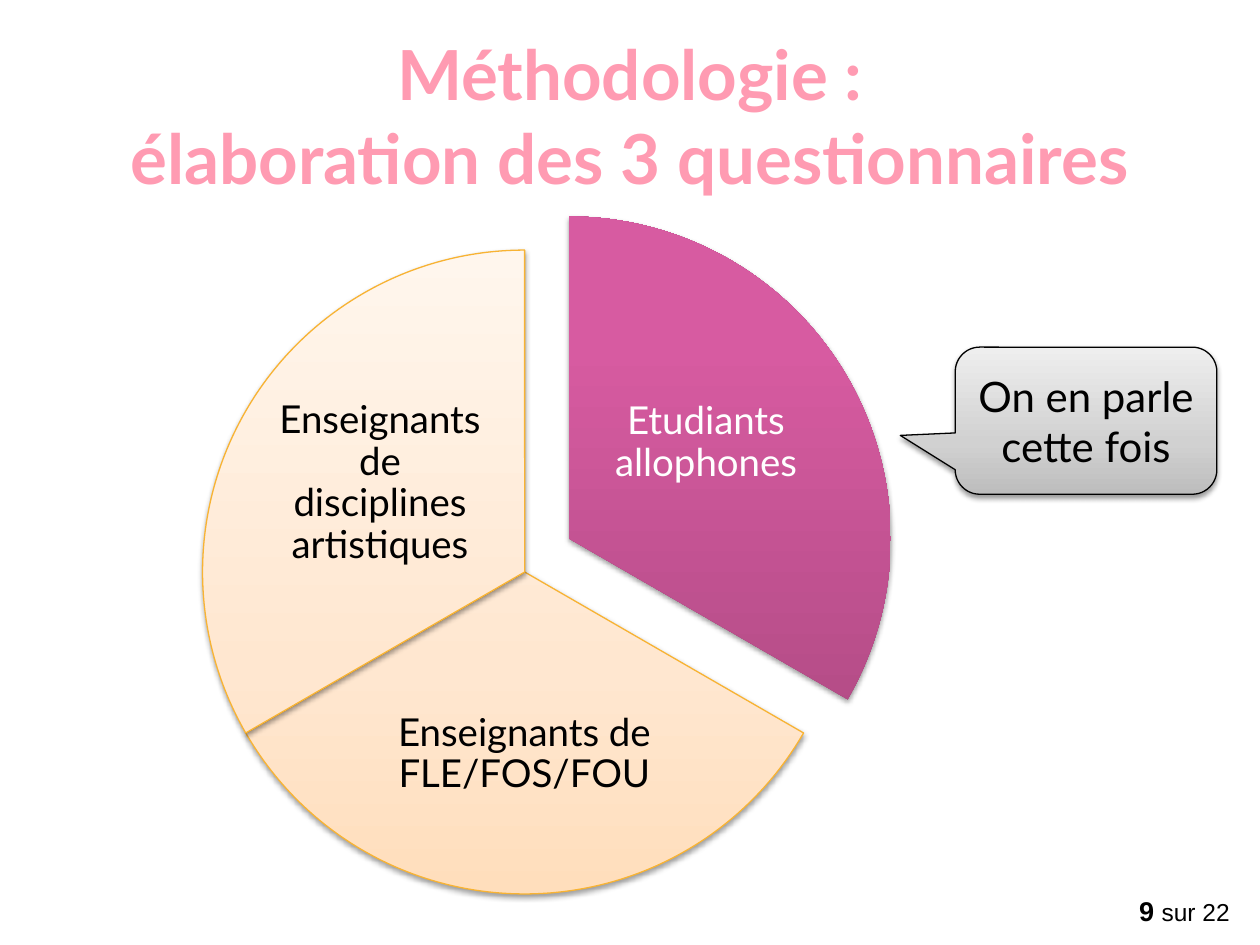
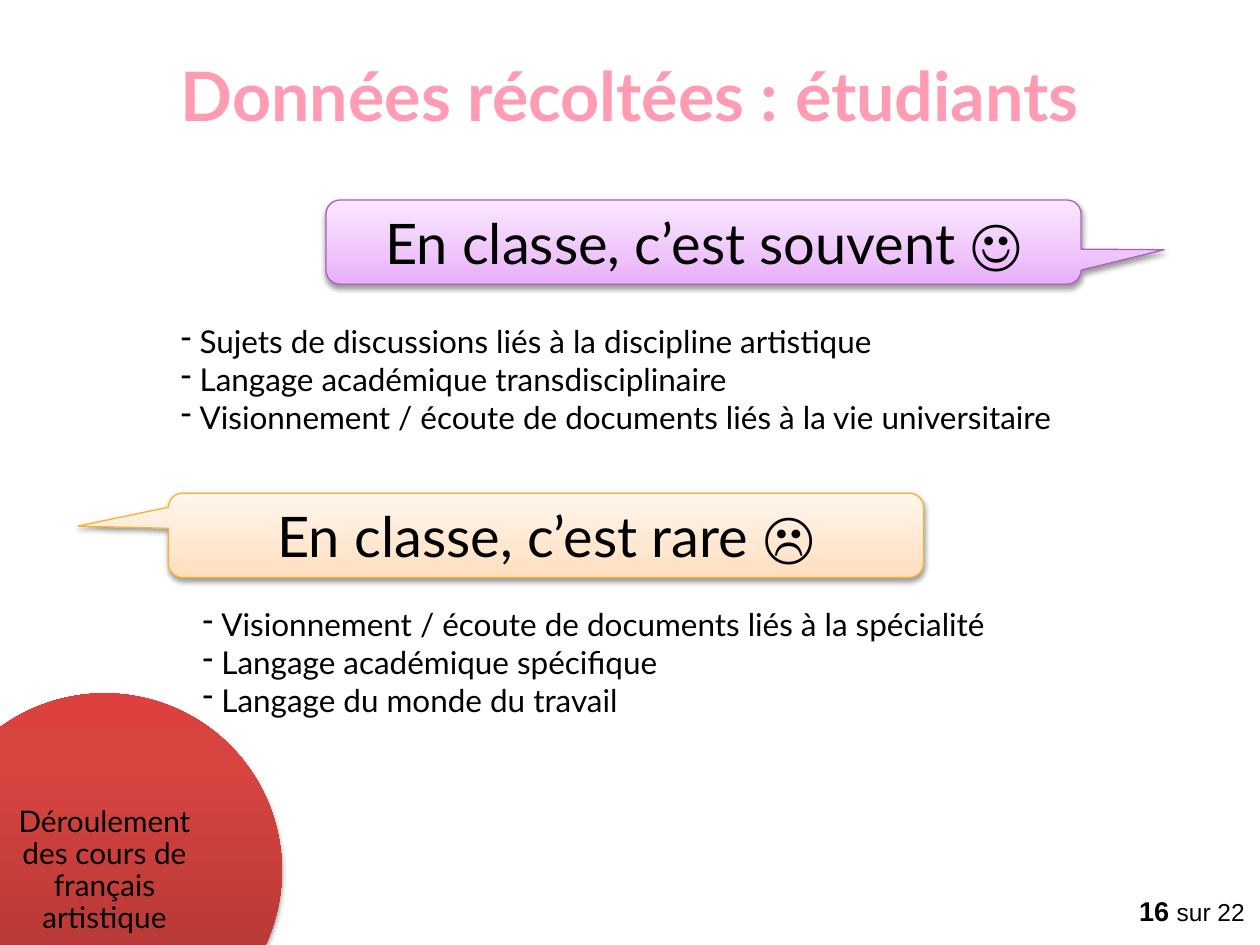
from dataclasses import dataclass
from typing import NamedTuple

import lxml.etree
import pptx
import pptx.dml.color
import pptx.enum.shapes
import pptx.enum.text
import pptx.oxml.ns
import pptx.util

Cm = pptx.util.Cm
Pt = pptx.util.Pt
SHAPE = pptx.enum.shapes.MSO_SHAPE
ALIGN = pptx.enum.text.PP_ALIGN
ANCHOR = pptx.enum.text.MSO_ANCHOR
qn = pptx.oxml.ns.qn


class Box(NamedTuple):
    """A rectangle in centimetres."""
    left: float
    top: float
    width: float
    height: float

    def region(self, left, top, width, height):
        return Box(self.left + left, self.top + top, width, height)

    def shifted(self, right, down):
        return self.region(right, down, self.width, self.height)

    def inner(self, margin):
        return self.region(margin, margin, self.width - 2 * margin, self.height - 2 * margin)

    def lengths(self):
        return [Cm(length) for length in self]


class Paint(NamedTuple):
    """Gradient stops from bottom to top, and an optional outline."""
    stops: tuple
    outline: str = ""


@dataclass(frozen=True)
class Theme:
    width: float = 25.43
    height: float = 19.08
    font: str = "Lato"
    footer_font: str = "Arial"
    title_color: str = "FF9BB2"
    ink: str = "000000"
    light_ink: str = "FFFFFF"
    heading_size: float = 32
    remark_size: float = 24
    wedge_size: float = 22
    list_size: float = 18
    topic_size: float = 17
    number_size: float = 15.5
    total_size: float = 14
    outline_width: float = 0.75
    pink: Paint = Paint(((0, "A5467C"), (80, "D75BA1"), (100, "DA59A2")))
    red: Paint = Paint(((0, "A73431"), (80, "D84440"), (100, "DC413D")))
    cream: Paint = Paint(((0, "FFDEBC"), (35, "FFE7D0"), (100, "FFF6ED")), "F8B333")
    violet: Paint = Paint(((0, "E9ACFA"), (35, "EFC5FB"), (100, "F9E8FE")), "AA62B9")
    grey: Paint = Paint(((0, "BDBDBD"), (35, "D1D1D1"), (100, "EEEEEE")), "000000")


THEME = Theme()
TOTAL_PAGES = 22


def rgb(code):
    return pptx.dml.color.RGBColor.from_string(code)


def add_color(parent, code):
    return lxml.etree.SubElement(parent, qn("a:srgbClr"), val=code)


def apply_gradient(shape, stops):
    shape.fill.gradient()
    shape.fill.gradient_angle = 90
    stop_list = shape._element.spPr.find(".//" + qn("a:gsLst"))
    for default_stop in list(stop_list):
        stop_list.remove(default_stop)
    for percent, code in stops:
        stop = lxml.etree.SubElement(stop_list, qn("a:gs"), pos=str(percent * 1000))
        add_color(stop, code)


def apply_shadow(shape):
    shape.shadow.inherit = False
    effects = shape._element.spPr.find(qn("a:effectLst"))
    shadow = lxml.etree.SubElement(
        effects, qn("a:outerShdw"), blurRad=str(Pt(3.1)), dist=str(Pt(1.6)),
        dir="5400000", rotWithShape="0")
    lxml.etree.SubElement(add_color(shadow, THEME.ink), qn("a:alpha"), val="38000")


def add_painted(slide, kind, box, paint, adjustments=()):
    shape = slide.shapes.add_shape(kind, *box.lengths())
    for index, value in enumerate(adjustments):
        shape.adjustments[index] = value
    apply_gradient(shape, paint.stops)
    if paint.outline:
        shape.line.color.rgb = rgb(paint.outline)
        shape.line.width = Pt(THEME.outline_width)
    else:
        shape.line.fill.background()
    apply_shadow(shape)
    return shape


def style_font(font, size, color=THEME.ink, name=THEME.font, bold=False):
    font.name = name
    font.size = Pt(size)
    font.bold = bold
    font.color.rgb = rgb(color)


def add_frame(slide, box, side=0.0, ends=0.0, anchor=ANCHOR.TOP):
    frame = slide.shapes.add_textbox(*box.lengths()).text_frame
    frame.word_wrap = True
    frame.vertical_anchor = anchor
    frame.margin_left = frame.margin_right = Cm(side)
    frame.margin_top = frame.margin_bottom = Cm(ends)
    return frame


def add_label(slide, box, text, size, color=THEME.ink, side=0.08):
    """Centred, tightly set text over a shape."""
    label = add_frame(slide, box, side, 0.06, ANCHOR.MIDDLE).paragraphs[0]
    label.text = text
    label.alignment = ALIGN.CENTER
    label.line_spacing = 0.9
    style_font(label.font, size, color)


def add_title(slide, box, text, size):
    title = add_frame(slide, box).paragraphs[0]
    title.text = text
    title.alignment = ALIGN.CENTER
    title.line_spacing = 1.01
    style_font(title.font, size, THEME.title_color, bold=True)


def add_page_number(slide, number):
    box = Box(THEME.width - 2.54, THEME.height - 1.02, 2.44, 0.66)
    frame = add_frame(slide, box, side=0.1)
    frame.word_wrap = False
    line = frame.paragraphs[0]
    for text, size, bold in ((f"{number} ", THEME.number_size, True),
                             (f"sur {TOTAL_PAGES}", THEME.total_size, False)):
        run = line.add_run()
        run.text = text
        style_font(run.font, size, name=THEME.footer_font, bold=bold)


def add_callout(slide, box, text, size, paint, tip):
    """Speech bubble; tip is the pointer's end, as shares of the box from its centre."""
    bubble = add_painted(slide, SHAPE.ROUNDED_RECTANGULAR_CALLOUT, box, paint, (*tip, 0.167))
    frame = bubble.text_frame
    frame.word_wrap = True
    frame.vertical_anchor = ANCHOR.MIDDLE
    remark = frame.paragraphs[0]
    remark.text = text
    remark.alignment = ALIGN.CENTER
    style_font(remark.font, size)


def add_dash_list(slide, box, items):
    frame = add_frame(slide, box, 0.25, 0.13)
    for index, text in enumerate(items):
        item = frame.add_paragraph() if index else frame.paragraphs[0]
        item.text = text
        style_font(item.font, THEME.list_size)
        properties = item._p.get_or_add_pPr()
        indent = Cm(0.38)
        properties.set("marL", str(indent))
        properties.set("indent", str(-indent))
        dash = lxml.etree.Element(qn("a:buChar"), char="-")
        properties.insert(0, dash)


def add_audience_pie(slide, disc):
    """Three equal wedges, the first pulled out to the upper right."""
    pulled = disc.shifted(0.89, -0.68)
    wedges = (
        (pulled, 270, THEME.pink, THEME.light_ink,
         pulled.region(7.06, 2.41, 4.42, 4.34), "Etudiants allophones"),
        (disc, 30, THEME.cream, THEME.ink,
         disc.region(3.56, 8.18, 5.87, 4.01), "Enseignants de FLE/FOS/FOU"),
        (disc, 150, THEME.cream, THEME.ink,
         disc.region(1.37, 2.54, 4.42, 4.34), "Enseignants de disciplines artistiques"),
    )
    for circle, start, paint, ink, label_box, text in wedges:
        end = (start + 120) % 360
        add_painted(slide, SHAPE.PIE, circle, paint, (start * 0.6, end * 0.6))
        add_label(slide, label_box, text, THEME.wedge_size, ink)


def add_topic_disc(slide, disc, text):
    add_painted(slide, SHAPE.OVAL, disc, THEME.red)
    add_label(slide, disc.inner(1.05), text, THEME.topic_size, side=0.41)


def build_method_slide(slide):
    add_title(slide, Box(0, 0.63, THEME.width, 3.43),
              "Méthodologie :\nélaboration des 3 questionnaires", 39.5)
    add_audience_pie(slide, Box(4.09, 5.05, 13, 13))
    add_callout(slide, Box(19.28, 7.01, 5.28, 2.97), "On en parle cette fois",
                THEME.remark_size, THEME.grey, (-0.71, 0.1))
    add_page_number(slide, 9)


def build_results_slide(slide):
    add_topic_disc(slide, Box(-1.47, 14, 7.16, 7.16),
                   "Déroulement des cours de français artistique")
    add_title(slide, Box(0, 1.06, THEME.width, 1.7), "Données récoltées : étudiants", 39)
    add_callout(slide, Box(6.58, 4.04, 15.24, 1.7), "En classe, c’est souvent ☺",
                THEME.heading_size, THEME.violet, (0.61, 0.09))
    add_dash_list(slide, Box(3.4, 6.38, 20.12, 2.57), (
        "Sujets de discussions liés à la discipline artistique",
        "Langage académique transdisciplinaire",
        "Visionnement / écoute de documents liés à la vie universitaire"))
    add_callout(slide, Box(3.4, 9.96, 15.24, 1.7), "En classe, c’est rare ☹",
                THEME.heading_size, THEME.cream, (-0.62, -0.11))
    add_dash_list(slide, Box(3.84, 12.09, 17.09, 2.57), (
        "Visionnement / écoute de documents liés à la spécialité",
        "Langage académique spécifique",
        "Langage du monde du travail"))
    add_page_number(slide, 16)


def main():
    deck = pptx.Presentation()
    deck.slide_width = Cm(THEME.width)
    deck.slide_height = Cm(THEME.height)
    blank = deck.slide_layouts[6]
    for build in (build_method_slide, build_results_slide):
        build(deck.slides.add_slide(blank))
    deck.save("out.pptx")


if __name__ == "__main__":
    main()
